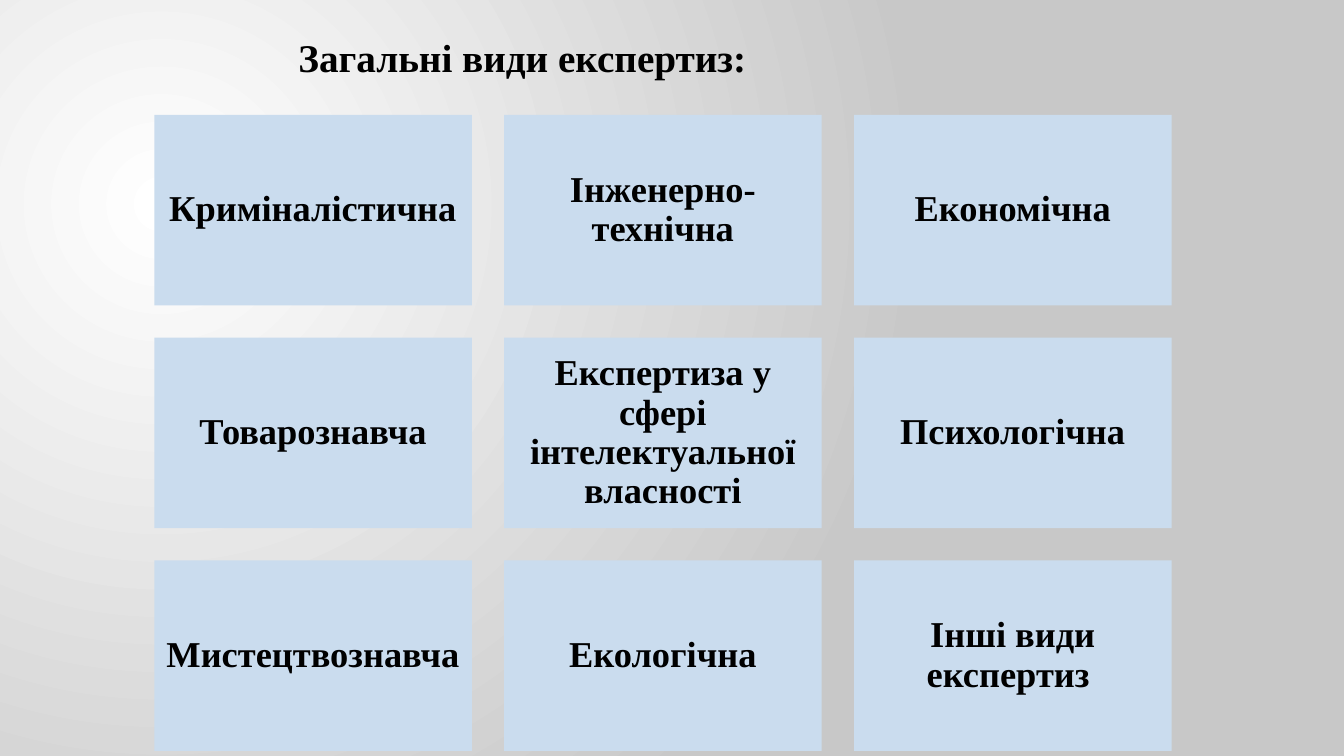
from lxml.etree import SubElement
from pptx import Presentation
from pptx.dml.color import RGBColor
from pptx.enum.shapes import MSO_SHAPE
from pptx.enum.text import MSO_ANCHOR, MSO_AUTO_SIZE, PP_ALIGN
from pptx.oxml.ns import qn
from pptx.util import Inches, Pt

TITLE = "Загальні види експертиз:"
EXPERTISE_TYPES = [
    ["Криміналістична ", "Інженерно-технічна", "Економічна"],
    ["Товарознавча", "Експертиза у сфері інтелектуальної власності", "Психологічна"],
    ["Мистецтвознавча", "Екологічна", "Інші види експертиз "],
]
FONT = "Times New Roman"
BLACK, CARD_BLUE = "000000", "CADCEE"
BACKGROUND = ["FFFFFF", "C8C8C8"]
GLOW = {"l": 50, "t": 55, "r": 125, "b": 100}
GRID_LEFT, GRID_TOP = 1.53, 1.14
CARD_WIDTH, CARD_HEIGHT, GAP = 3.15, 1.89, 0.32


def color(value):
    return RGBColor.from_string(value)


def write(shape, text, size, align, anchor, margin=None, **spacing):
    frame = shape.text_frame
    frame.word_wrap = True
    frame.auto_size = MSO_AUTO_SIZE.NONE
    frame.vertical_anchor = anchor
    if margin is not None:
        frame.margin_left = frame.margin_right = Inches(margin)
        frame.margin_top = frame.margin_bottom = Inches(margin)
    para = frame.paragraphs[0]
    para.alignment = align
    for name, value in spacing.items():
        setattr(para, name, value)
    span = para.add_run()
    span.text = text
    span.font.name = FONT
    span.font.size = Pt(size)
    span.font.bold = True
    span.font.color.rgb = color(BLACK)


def paint_background(page):
    fill = page.background.fill
    fill.gradient()
    for stop, value in zip(fill.gradient_stops, BACKGROUND):
        stop.color.rgb = color(value)
    gradient = next(page.element.iter(qn("a:gradFill")))
    gradient.remove(gradient.find(qn("a:lin")))
    circle = SubElement(gradient, qn("a:path"), {"path": "circle"})
    SubElement(circle, qn("a:fillToRect"),
               {side: str(share * 1000) for side, share in GLOW.items()})


def add_title(page):
    title = page.shapes.title
    title.left, title.top = Inches(2.86), Inches(0.28)
    title.width, title.height = Inches(7.44), Inches(0.79)
    write(title, TITLE, 28, PP_ALIGN.LEFT, MSO_ANCHOR.TOP, space_before=Pt(10))


def add_card(page, text, row, column):
    left = GRID_LEFT + column * (CARD_WIDTH + GAP)
    top = GRID_TOP + row * (CARD_HEIGHT + GAP)
    card = page.shapes.add_shape(MSO_SHAPE.RECTANGLE, Inches(left), Inches(top),
                                 Inches(CARD_WIDTH), Inches(CARD_HEIGHT))
    card.shadow.inherit = False
    card.fill.solid()
    card.fill.fore_color.rgb = color(CARD_BLUE)
    card.line.fill.background()
    write(card, text, 26, PP_ALIGN.CENTER, MSO_ANCHOR.MIDDLE, margin=0.11,
          line_spacing=0.9, space_after=Pt(9))


def main():
    """Build the slide with the grid of expertise types."""
    deck = Presentation()
    deck.slide_width, deck.slide_height = Inches(13.33), Inches(7.5)
    page = deck.slides.add_slide(deck.slide_layouts.get_by_name("Title Only"))
    paint_background(page)
    add_title(page)
    for row, names in enumerate(EXPERTISE_TYPES):
        for column, name in enumerate(names):
            add_card(page, name, row, column)
    deck.save("out.pptx")


if __name__ == "__main__":
    main()
